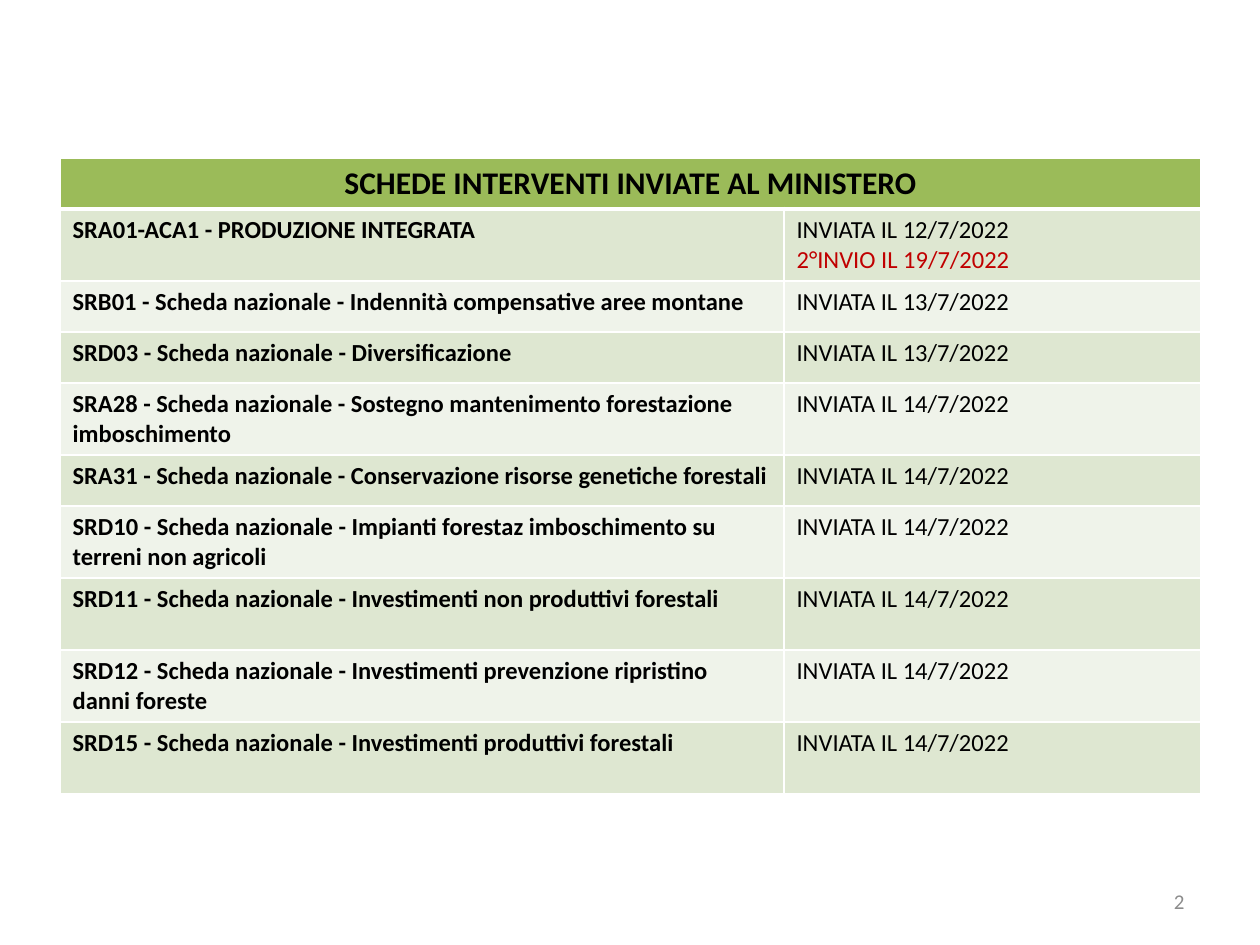
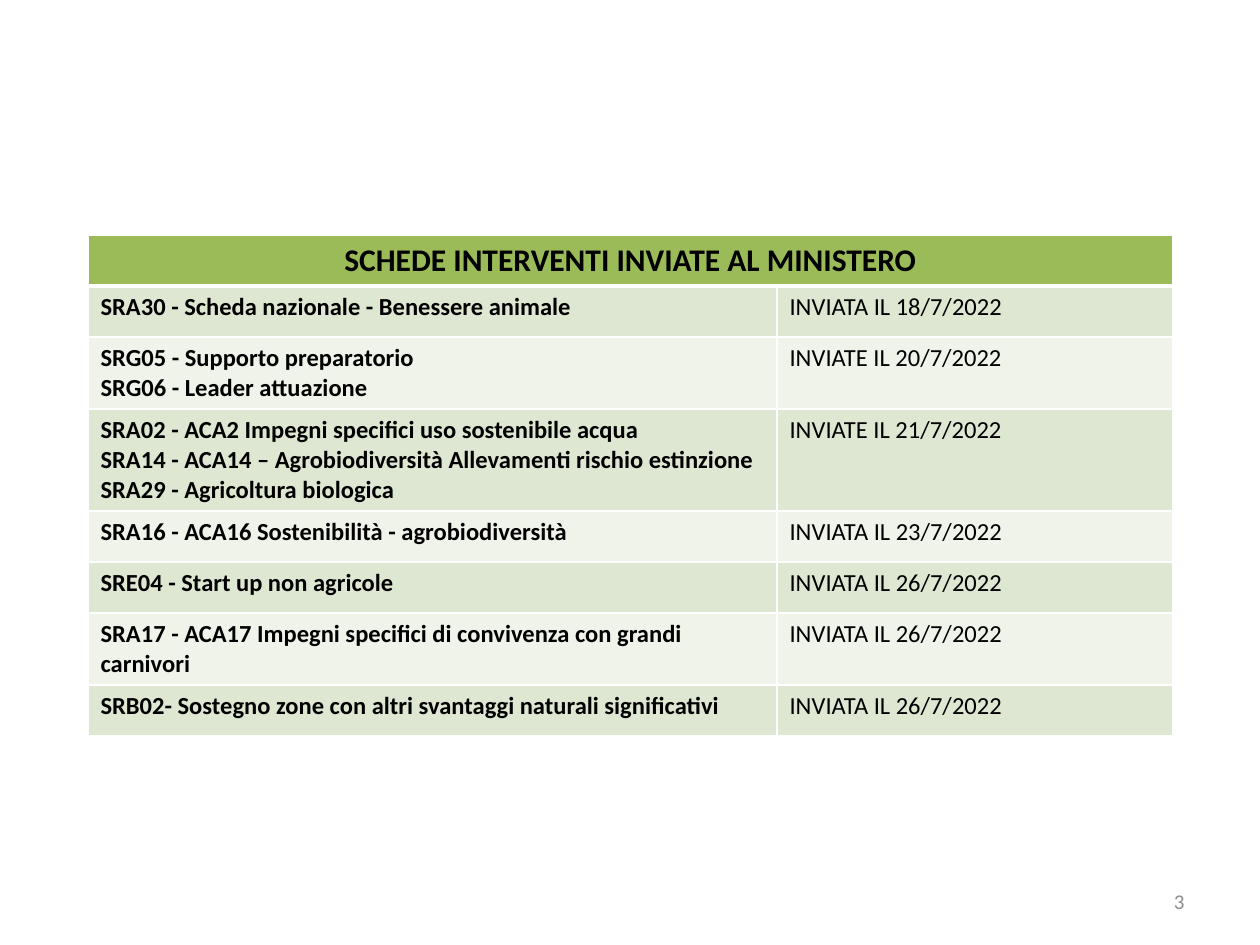
from lxml import etree
from pptx import Presentation
from pptx.dml.color import RGBColor
from pptx.enum.text import MSO_ANCHOR, PP_ALIGN
from pptx.oxml.ns import qn
from pptx.util import Pt

PX = 914400 // 126
SCALE = 914400 / 126
FONT = "Calibri"
BLACK = RGBColor(0x00, 0x00, 0x00)
RED = RGBColor(0xC0, 0x00, 0x00)
GRAY = RGBColor(0x8C, 0x8C, 0x8C)
WHITE = RGBColor(0xFF, 0xFF, 0xFF)
HEADER_GREEN = RGBColor(0x9B, 0xBB, 0x59)
BANDS = [RGBColor(0xDE, 0xE7, 0xD1), RGBColor(0xEF, 0xF3, 0xEA)]
HEADING = "SCHEDE INTERVENTI INVIATE AL MINISTERO"
HEADER_HEIGHT = 51
ROW_HEIGHTS = {1: 51, 2: 72, 3: 102}

PAGES = [
    {"number": "2", "left": 60, "top": 158, "columns": [724, 417], "rows": [
        (2, "SRA01-ACA1 - PRODUZIONE INTEGRATA", "INVIATA IL 12/7/2022\n2°INVIO IL 19/7/2022"),
        (1, "SRB01 - Scheda nazionale - Indennità compensative aree montane", "INVIATA IL 13/7/2022"),
        (1, "SRD03 - Scheda nazionale - Diversificazione", "INVIATA IL 13/7/2022"),
        (2, "SRA28 - Scheda nazionale - Sostegno mantenimento forestazione imboschimento",
         "INVIATA IL 14/7/2022"),
        (1, "SRA31 - Scheda nazionale - Conservazione risorse genetiche forestali",
         "INVIATA IL 14/7/2022"),
        (2, "SRD10 - Scheda nazionale - Impianti forestaz imboschimento su terreni non agricoli",
         "INVIATA IL 14/7/2022"),
        (2, "SRD11 - Scheda nazionale - Investimenti non produttivi forestali", "INVIATA IL 14/7/2022"),
        (2, "SRD12 - Scheda nazionale - Investimenti prevenzione ripristino danni foreste",
         "INVIATA IL 14/7/2022"),
        (2, "SRD15 - Scheda nazionale - Investimenti produttivi forestali", "INVIATA IL 14/7/2022"),
    ]},
    {"number": "3", "left": 88, "top": 235, "columns": [689, 396], "rows": [
        (1, "SRA30 - Scheda nazionale - Benessere animale", "INVIATA IL 18/7/2022"),
        (2, "SRG05 - Supporto preparatorio\nSRG06 - Leader attuazione", "INVIATE IL 20/7/2022"),
        (3, "SRA02 - ACA2 Impegni specifici uso sostenibile acqua\n"
            "SRA14 - ACA14 – Agrobiodiversità Allevamenti rischio estinzione\n"
            "SRA29 - Agricoltura biologica", "INVIATE IL 21/7/2022"),
        (1, "SRA16 - ACA16 Sostenibilità - agrobiodiversità", "INVIATA IL 23/7/2022"),
        (1, "SRE04 - Start up non agricole", "INVIATA IL 26/7/2022"),
        (2, "SRA17 - ACA17 Impegni specifici di convivenza con grandi carnivori",
         "INVIATA IL 26/7/2022"),
        (1, "SRB02- Sostegno zone con altri svantaggi naturali significativi", "INVIATA IL 26/7/2022"),
    ]},
]


def write(text_frame, text, size=14, bold=False, color=BLACK, align=PP_ALIGN.LEFT, next_color=None):
    text_frame.word_wrap = True
    for index, line in enumerate(text.split("\n")):
        paragraph = text_frame.add_paragraph() if index else text_frame.paragraphs[0]
        paragraph.alignment = align
        run = paragraph.add_run()
        run.text = line
        run.font.name = FONT
        run.font.size = Pt(size)
        run.font.bold = bold
        run.font.color.rgb = next_color if index and next_color else color


def style_cell(cell, fill_color, top=1, bottom=1):
    properties = cell._tc.get_or_add_tcPr()
    for side, width in (("L", 1), ("R", 1), ("T", top), ("B", bottom)):
        line = etree.SubElement(properties, qn(f"a:ln{side}"), w=str(Pt(width)))
        solid = etree.SubElement(line, qn("a:solidFill"))
        etree.SubElement(solid, qn("a:srgbClr"), val=str(WHITE))
    cell.fill.solid()
    cell.fill.fore_color.rgb = fill_color


presentation = Presentation()
presentation.slide_width = round(1260 * SCALE)
presentation.slide_height = round(945 * SCALE)

for page in PAGES:
    slide = presentation.slides.add_slide(presentation.slide_layouts[6])

    page_number = slide.shapes.add_textbox(*(round(length * SCALE) for length in (903, 876, 294, 50)))
    page_number.text_frame.vertical_anchor = MSO_ANCHOR.MIDDLE
    write(page_number.text_frame, page["number"], size=12, color=GRAY, align=PP_ALIGN.RIGHT)

    heights = [HEADER_HEIGHT] + [ROW_HEIGHTS[lines] for lines, _, _ in page["rows"]]
    frame = (page["left"], page["top"], sum(page["columns"]), sum(heights))
    table = slide.shapes.add_table(len(heights), 2, *(round(length * SCALE) for length in frame)).table
    for column, width in zip(table.columns, page["columns"]):
        column.width = round(width * SCALE)
    for row, height in zip(table.rows, heights):
        row.height = round(height * SCALE)

    for cell in table.rows[0].cells:
        style_cell(cell, HEADER_GREEN, bottom=3)
    table.cell(0, 0).merge(table.cell(0, 1))
    write(table.cell(0, 0).text_frame, HEADING, size=18, bold=True, align=PP_ALIGN.CENTER)

    for index, (_, measure, dispatch) in enumerate(page["rows"]):
        measure_cell, dispatch_cell = table.rows[index + 1].cells
        for cell in (measure_cell, dispatch_cell):
            style_cell(cell, BANDS[index % 2], top=1 if index else 3)
        write(measure_cell.text_frame, measure, bold=True)
        write(dispatch_cell.text_frame, dispatch, next_color=RED)

presentation.save("out.pptx")
